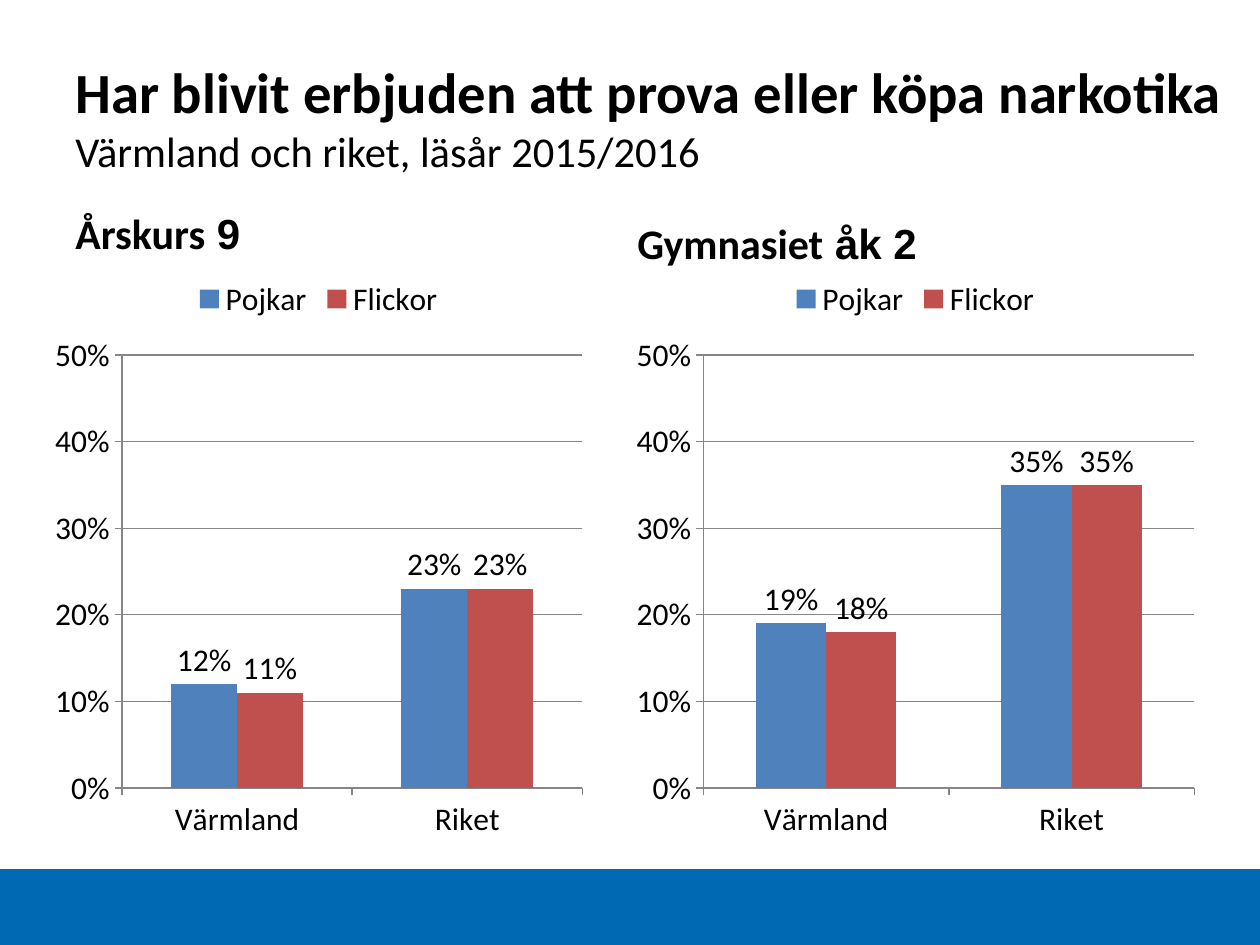
from pptx import Presentation
from pptx import util as u
from pptx.chart.data import CategoryChartData
from pptx.dml.color import RGBColor
from pptx.enum import chart as ch, shapes, text


def paint(target, color):
    target.fill.solid()
    target.fill.fore_color.rgb = RGBColor.from_string(color)


def add_text(left, top, width, height, lines, anchor):
    frame = slide.shapes.add_textbox(u.Cm(left), u.Cm(top), u.Cm(width), u.Cm(height)).text_frame
    frame.word_wrap = True
    frame.vertical_anchor = anchor
    paragraph = frame.paragraphs[0]
    for index, line in enumerate(lines):
        if index:
            paragraph.add_line_break()
        for words, size, bold, family in line:
            run = paragraph.add_run()
            run.text = words
            run.font.size = u.Pt(size)
            run.font.bold = bold
            run.font.name = family
            paint(run.font, "000000")


prs = Presentation()
prs.slide_width, prs.slide_height = u.Cm(25.4), u.Cm(19.05)
slide = prs.slides.add_slide(prs.slide_layouts[6])

footer = slide.shapes.add_shape(
    shapes.MSO_SHAPE.RECTANGLE, 0, u.Cm(17.52), prs.slide_width, u.Cm(1.53))
footer.shadow.inherit = False
paint(footer, "0069B4")
footer.line.fill.background()

add_text(1.27, 0.76, 23.62, 3.18, [
    [("Har blivit erbjuden att prova eller köpa narkotika", 32.4, True, "Calibri")],
    [("Värmland och riket, läsår 2015/2016", 24.3, False, "Calibri")],
], text.MSO_ANCHOR.MIDDLE)

groups = [
    ("Årskurs", " 9", 1.27, 1.6, 0.89, 11.07, (0.12, 0.23), (0.11, 0.23)),
    ("Gymnasiet", " åk 2", 12.6, 1.8, 12.6, 11.71, (0.19, 0.35), (0.18, 0.35)),
]
for school, grade, heading_left, heading_height, left, width, boys, girls in groups:
    add_text(heading_left, 3.73, 10.69, heading_height, [
        [(school, 24, True, "Calibri"), (grade, 24, True, "Arial")],
    ], text.MSO_ANCHOR.BOTTOM)

    shares = CategoryChartData(number_format="0%")
    shares.categories = ["Värmland", "Riket"]
    shares.add_series("Pojkar", boys)
    shares.add_series("Flickor", girls)
    chart = slide.shapes.add_chart(
        ch.XL_CHART_TYPE.COLUMN_CLUSTERED,
        u.Cm(left), u.Cm(5.33), u.Cm(width), u.Cm(11.81), shares).chart
    chart.has_title = False
    chart.font.size = u.Pt(18)
    chart.font.name = "Calibri"
    paint(chart.font, "000000")
    chart.has_legend = True
    chart.legend.position = ch.XL_LEGEND_POSITION.TOP
    chart.legend.include_in_layout = False

    percent = chart.value_axis
    percent.minimum_scale, percent.maximum_scale, percent.major_unit = 0, 0.5, 0.1
    percent.has_major_gridlines = True
    percent.tick_labels.number_format = "0%"
    percent.tick_labels.number_format_is_linked = False
    for axis in (percent, chart.category_axis):
        axis.major_tick_mark = ch.XL_TICK_MARK.OUTSIDE
        paint(axis.format.line, "868686")
    paint(percent.major_gridlines.format.line, "868686")

    columns = chart.plots[0]
    columns.gap_width = 150
    columns.overlap = 0
    columns.vary_by_categories = False
    for series, color in zip(columns.series, ("4F81BD", "C0504D")):
        paint(series.format, color)
        labels = series.data_labels
        labels.show_value = True
        labels.position = ch.XL_LABEL_POSITION.OUTSIDE_END
        labels.number_format = "0%"
        labels.number_format_is_linked = False
        labels.font.size = u.Pt(18)

prs.save("out.pptx")
